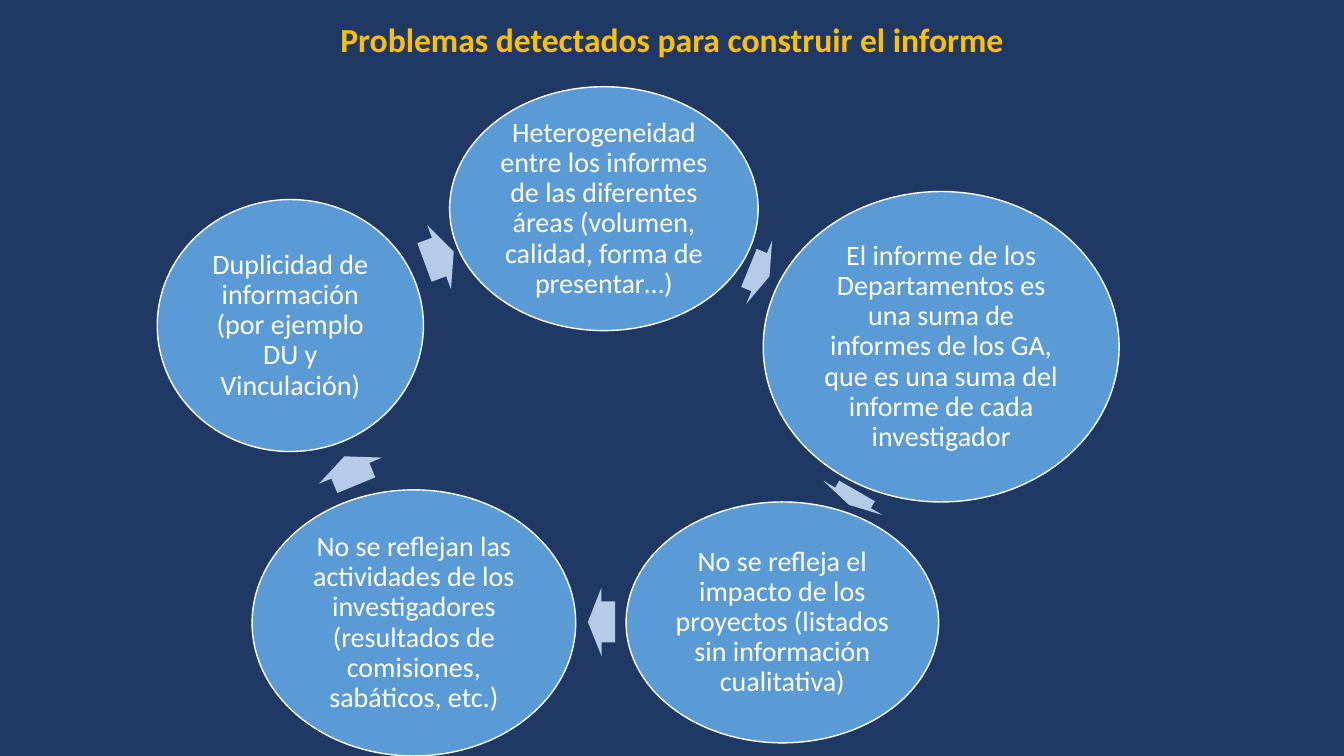
import dataclasses

import pptx
import pptx.dml.color
import pptx.enum.shapes
import pptx.enum.text
import pptx.util

Inches = pptx.util.Inches
Pt = pptx.util.Pt
Shape = pptx.enum.shapes.MSO_SHAPE
Align = pptx.enum.text.PP_ALIGN
Anchor = pptx.enum.text.MSO_ANCHOR
Fit = pptx.enum.text.MSO_AUTO_SIZE


@dataclasses.dataclass(frozen=True)
class Theme:
    back: str = "203864"
    title: str = "FFC000"
    disc: str = "5B9BD5"
    arrow: str = "B5CBE7"
    light: str = "FFFFFF"
    font: str = "Calibri"
    head: int = 24
    body: int = 20


THEME = Theme()

# Clockwise from the top: text, then left, top, width and height.
ISSUES = [
    ("Heterogeneidad entre los informes de las diferentes áreas "
     "(volumen, calidad, forma de presentar…)", (4.46, 0.86, 3.06, 2.42)),
    ("El informe de los Departamentos es una suma de informes de los GA, "
     "que es una suma del informe de cada investigador",
     (7.57, 1.9, 3.53, 3.08)),
    ("No se refleja el impacto de los proyectos "
     "(listados sin información cualitativa)", (6.21, 4.98, 3.1, 2.39)),
    ("No se reflejan las actividades de los investigadores "
     "(resultados de comisiones, sabáticos, etc.)", (2.5, 4.86, 3.21, 2.64)),
    ("Duplicidad de información (por ejemplo DU y Vinculación)",
     (1.56, 1.98, 2.64, 2.5)),
]

# Arrow after each issue: left, top, width and turn in degrees.
ARROWS = [
    (7.42, 2.36, 0.22, 22.2),
    (8.38, 4.6, 0.16, 120),
    (5.83, 5.83, 0.27, 179.9),
    (3.32, 4.33, 0.31, 247.5),
    (4.2, 2.21, 0.31, 339.6),
]
ARROW_HIGH = 0.68


def color(code):
    return pptx.dml.color.RGBColor.from_string(code)


def write(frame, text, size=THEME.body, tone=THEME.light, bold=False,
          space=1.0, anchor=Anchor.MIDDLE):
    frame.word_wrap = True
    frame.vertical_anchor = anchor
    para = frame.paragraphs[0]
    para.alignment = Align.CENTER
    para.line_spacing = space
    run = para.add_run()
    run.text = text
    run.font.name = THEME.font
    run.font.size = Pt(size)
    run.font.bold = bold
    run.font.color.rgb = color(tone)


def add_shape(slide, kind, box, fill):
    shape = slide.shapes.add_shape(kind, *map(Inches, box))
    shape.shadow.inherit = False
    shape.fill.solid()
    shape.fill.fore_color.rgb = color(fill)
    shape.line.fill.background()
    return shape


def add_title(slide, text):
    title = slide.shapes.title
    title.left, title.top = Inches(0), Inches(0.14)
    title.width, title.height = Inches(13.33), Inches(0.5)
    write(title.text_frame, text, size=THEME.head, tone=THEME.title,
          bold=True, anchor=Anchor.TOP)
    title.text_frame.auto_size = Fit.SHAPE_TO_FIT_TEXT


def add_disc(slide, text, box):
    disc = add_shape(slide, Shape.OVAL, box, THEME.disc)
    disc.line.color.rgb = color(THEME.light)
    disc.line.width = Pt(1)
    frame = disc.text_frame
    frame.margin_left = frame.margin_right = Inches(0.03)
    frame.margin_top = frame.margin_bottom = Inches(0.03)
    write(frame, text, space=0.9)


def add_arrow(slide, left, top, width, turn):
    arrow = add_shape(slide, Shape.RIGHT_ARROW,
                      (left, top, width, ARROW_HIGH), THEME.arrow)
    arrow.adjustments[0] = 0.6
    arrow.adjustments[1] = 0.5
    arrow.rotation = turn


def main():
    deck = pptx.Presentation()
    deck.slide_width, deck.slide_height = Inches(13.33), Inches(7.5)
    slide = deck.slides.add_slide(deck.slide_layouts.get_by_name("Title Only"))
    slide.background.fill.solid()
    slide.background.fill.fore_color.rgb = color(THEME.back)
    add_title(slide, "Problemas detectados para construir el informe")
    for (text, box), arrow in zip(ISSUES, ARROWS):
        add_disc(slide, text, box)
        add_arrow(slide, *arrow)
    deck.save("out.pptx")


if __name__ == "__main__":
    main()
